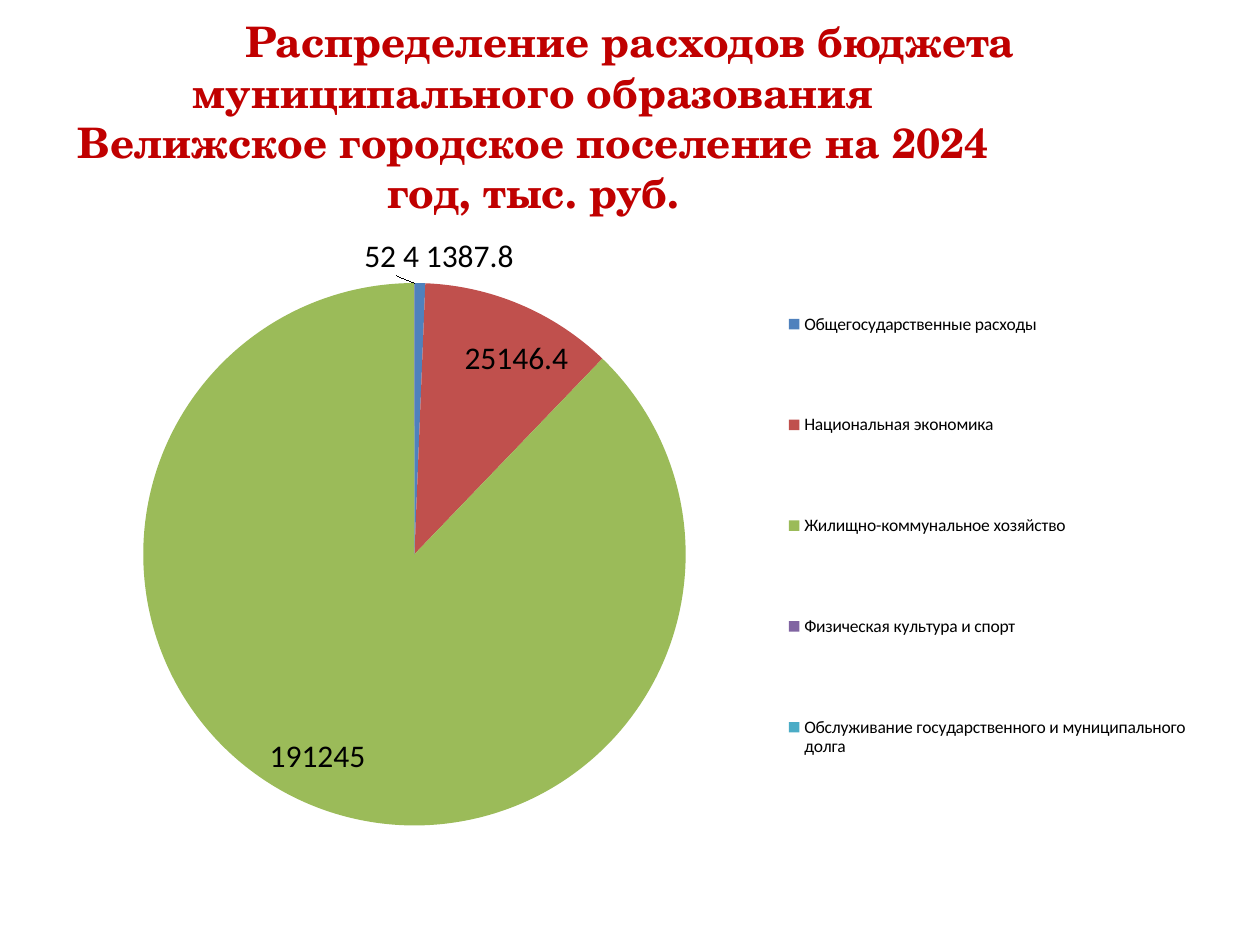
from lxml import etree
from pptx import Presentation
from pptx.chart.data import CategoryChartData
from pptx.dml.color import RGBColor
from pptx.enum import chart as charts, text
from pptx.oxml import parse_xml
from pptx.oxml.ns import nsdecls, qn
from pptx.util import Cm, Pt

THEME = {
    "title_font": "TeX Gyre Schola", "title_size": 24, "title_color": "C00000",
    "chart_font": "Calibri", "label_size": 18, "legend_size": 10, "text_color": "000000",
    "slices": ("4F81BD", "C0504D", "9BBB59", "8064A2", "4BACC6"),
}
TITLE = [
    ("Распределение расходов бюджета", 0),
    ("муниципального образования", 3.9),
    ("Велижское городское поселение на 2024 год, тыс. руб.", 0),
]
EXPENSES = [
    ("Общегосударственные расходы", 1387.8),
    ("Национальная экономика", 25146.4),
    ("Жилищно-коммунальное хозяйство", 191245),
    ("Физическая культура и спорт", 52),
    ("Обслуживание государственного и муниципального долга", 4),
]
SPORT = 3
SPORT_SHIFT = {"x": -0.03, "y": 0}
PIE_AREA = {"x": 0.07, "y": 0.1, "w": 0.48, "h": 0.87}
LEGEND_AREA = {"x": 0.63, "y": 0.02, "w": 0.37, "h": 0.97}


def color(name):
    return RGBColor.from_string(name)


def layout(place, inner=False):
    modes = [("layoutTarget", "inner")] if inner else []
    if "w" in place:
        modes += [("xMode", "edge"), ("yMode", "edge")]
    body = "".join(f'<c:{tag} val="{value}"/>' for tag, value in modes + list(place.items()))
    return parse_xml(f'<c:layout {nsdecls("c")}><c:manualLayout>{body}</c:manualLayout></c:layout>')


def add_title(slide):
    box = slide.shapes.add_textbox(Cm(1.27), Cm(0.76), Cm(22.86), Cm(3.18))
    frame = box.text_frame
    frame.word_wrap = True
    frame.auto_size = text.MSO_AUTO_SIZE.NONE
    frame.vertical_anchor = text.MSO_ANCHOR.MIDDLE
    for index, (words, right_indent) in enumerate(TITLE):
        line = frame.add_paragraph() if index else frame.paragraphs[0]
        line.alignment = text.PP_ALIGN.CENTER
        if right_indent:
            line._p.get_or_add_pPr().set("marR", str(Cm(right_indent)))
        run = line.add_run()
        run.text = words
        run.font.name = THEME["title_font"]
        run.font.size = Pt(THEME["title_size"])
        run.font.bold = True
        run.font.color.rgb = color(THEME["title_color"])


def add_expenses(slide):
    data = CategoryChartData()
    data.categories = [name for name, _ in EXPENSES]
    data.add_series("Расходы", [amount for _, amount in EXPENSES])
    chart = slide.shapes.add_chart(
        charts.XL_CHART_TYPE.PIE, Cm(1.27), Cm(4.45), Cm(22.86), Cm(12.57), data).chart
    chart.has_title = False
    chart.font.name = THEME["chart_font"]
    chart.font.size = Pt(THEME["label_size"])
    chart.font.color.rgb = color(THEME["text_color"])

    pie = chart.plots[0]
    pie.vary_by_categories = True
    series = pie.series[0]
    for index, fill in enumerate(THEME["slices"]):
        slice_fill = series.points[index].format.fill
        slice_fill.solid()
        slice_fill.fore_color.rgb = color(fill)

    labels = series.data_labels
    labels.show_value = True
    labels.show_percentage = False
    labels.position = charts.XL_LABEL_POSITION.BEST_FIT
    labels._element.find(qn("c:showLeaderLines")).set("val", "1")
    sport = series.points[SPORT].data_label
    sport.position = charts.XL_LABEL_POSITION.BEST_FIT
    sport_label = labels._element.find(qn("c:dLbl"))
    sport_label.find(qn("c:idx")).addnext(layout(SPORT_SHIFT))

    chart.has_legend = True
    legend = chart.legend
    legend.position = charts.XL_LEGEND_POSITION.RIGHT
    legend.include_in_layout = False
    legend.font.size = Pt(THEME["legend_size"])
    for old in legend._element.findall(qn("c:layout")):
        legend._element.remove(old)
    legend._element.find(qn("c:legendPos")).addnext(layout(LEGEND_AREA))

    area = chart._chartSpace.chart.plotArea
    for old in area.findall(qn("c:layout")):
        area.remove(old)
    area.insert(0, layout(PIE_AREA, inner=True))


deck = Presentation()
deck.slide_width, deck.slide_height = Cm(25.4), Cm(19.05)
slide = deck.slides.add_slide(deck.slide_layouts[6])
add_title(slide)
add_expenses(slide)
deck.save("out.pptx")
